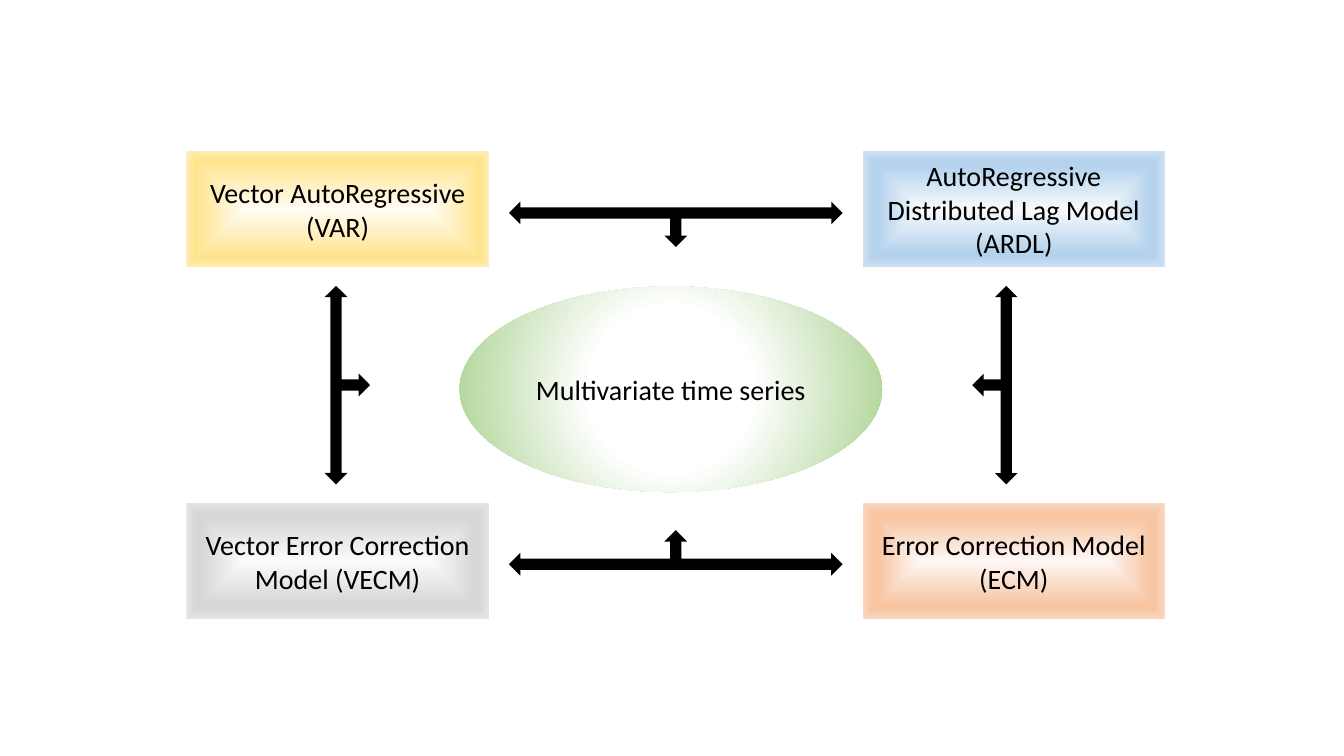
import pptx
import pptx.dml.color
import pptx.enum.shapes
import pptx.enum.text
import pptx.oxml
import pptx.oxml.ns
import pptx.util

Pt = pptx.util.Pt
SHAPES = pptx.enum.shapes.MSO_SHAPE

COLORS = {"text": "000000", "arrow": "000000"}
GRADIENTS = {
    "yellow": {0: "FFFCF2", 74: "FFE699", 83: "FFE38C", 100: "FFECB2"},
    "blue": {0: "F7FAFD", 74: "B5D2EC", 83: "B5D2EC", 100: "CEE1F2"},
    "orange": {0: "FEF8F5", 74: "F7C5A2", 83: "F7C5A2", 100: "FAD8C1"},
    "grey": {0: "FAFAFA", 74: "D7D7D7", 83: "D7D7D7", 100: "E4E4E4"},
    "green": {0: "FFFFFF", 35: "FFFFFF", 100: "A9D18E"},
}
BOX_WIDTH, BOX_HEIGHT = 216, 82.8
ARROW_DEPTH = 32.4


def add_plain_shape(slide, kind, center_x, center_y, width, height):
    """Add a shape around a centre point, without line or shadow."""
    shape = slide.shapes.add_shape(
        kind, Pt(center_x - width / 2), Pt(center_y - height / 2), Pt(width), Pt(height))
    shape.shadow.inherit = False
    shape.line.fill.background()
    return shape


def fill_from_center(shape, stops, outline):
    """Fill a shape with a gradient that spreads from its centre."""
    stop_xml = "".join(
        f'<a:gs pos="{position * 1000}"><a:srgbClr val="{color}"/></a:gs>'
        for position, color in stops.items())
    gradient = pptx.oxml.parse_xml(
        f'<a:gradFill {pptx.oxml.ns.nsdecls("a")} rotWithShape="1">'
        f'<a:gsLst>{stop_xml}</a:gsLst><a:path path="{outline}">'
        '<a:fillToRect l="50000" t="50000" r="50000" b="50000"/></a:path></a:gradFill>')
    shape.fill.background()
    properties = shape.element.spPr
    properties.replace(properties.find(pptx.oxml.ns.qn("a:noFill")), gradient)


def write_text(shape, text, size=20, font="Calibri", color=COLORS["text"]):
    """Write centred text, one paragraph per line, into a shape."""
    frame = shape.text_frame
    frame.word_wrap = True
    frame.vertical_anchor = pptx.enum.text.MSO_ANCHOR.MIDDLE
    frame.text = text
    for paragraph in frame.paragraphs:
        paragraph.alignment = pptx.enum.text.PP_ALIGN.CENTER
        for run in paragraph.runs:
            run.font.size = Pt(size)
            run.font.name = font
            run.font.color.rgb = pptx.dml.color.RGBColor.from_string(color)


def add_models(slide, left, top, width, height):
    """Place the four model boxes in the corners of the area."""
    columns = left + BOX_WIDTH / 2, left + width - BOX_WIDTH / 2
    rows = top + BOX_HEIGHT / 2, top + height - BOX_HEIGHT / 2
    models = [
        (0, 0, "Vector AutoRegressive\n(VAR)", "yellow"),
        (1, 0, "AutoRegressive Distributed Lag Model\n(ARDL)", "blue"),
        (1, 1, "Error Correction Model\n(ECM)", "orange"),
        (0, 1, "Vector Error Correction Model (VECM)", "grey"),
    ]
    for column, row, text, gradient in models:
        shape = add_plain_shape(
            slide, SHAPES.RECTANGLE, columns[column], rows[row], BOX_WIDTH, BOX_HEIGHT)
        fill_from_center(shape, GRADIENTS[gradient], "rect")
        write_text(shape, text)


def add_topic(slide, left, top, width, height):
    """Place the central ellipse in the middle of the area."""
    shape = add_plain_shape(
        slide, SHAPES.OVAL, left + width / 2 - 3.5, top + height / 2 + 3, 301.7, 146.9)
    fill_from_center(shape, GRADIENTS["green"], "circle")
    write_text(shape, "Multivariate time series")


def add_arrows(slide, left, top, width, height):
    """Place a three-way arrow on each side, pointing to the centre."""
    middle_x, middle_y = left + width / 2, top + height / 2
    across = 238.3
    down = 141.8
    arrows = [
        (middle_x, top + height - 47.2, across, 0),
        (middle_x, top + 52.2, across, 180),
        (left + 114.9, middle_y, down, 90),
        (left + width - 121.5, middle_y, down, 270),
    ]
    for center_x, center_y, length, rotation in arrows:
        shape = add_plain_shape(
            slide, SHAPES.LEFT_RIGHT_UP_ARROW, center_x, center_y, length, ARROW_DEPTH)
        shape.rotation = rotation
        shape.fill.solid()
        shape.fill.fore_color.rgb = pptx.dml.color.RGBColor.from_string(COLORS["arrow"])


def main():
    """Build the slide and save it."""
    presentation = pptx.Presentation()
    presentation.slide_width, presentation.slide_height = Pt(960), Pt(540)
    slide = presentation.slides.add_slide(presentation.slide_layouts[6])
    area = 133.2, 108, 699, 334.1
    add_topic(slide, *area)
    add_models(slide, *area)
    add_arrows(slide, *area)
    presentation.save("out.pptx")


if __name__ == "__main__":
    main()
